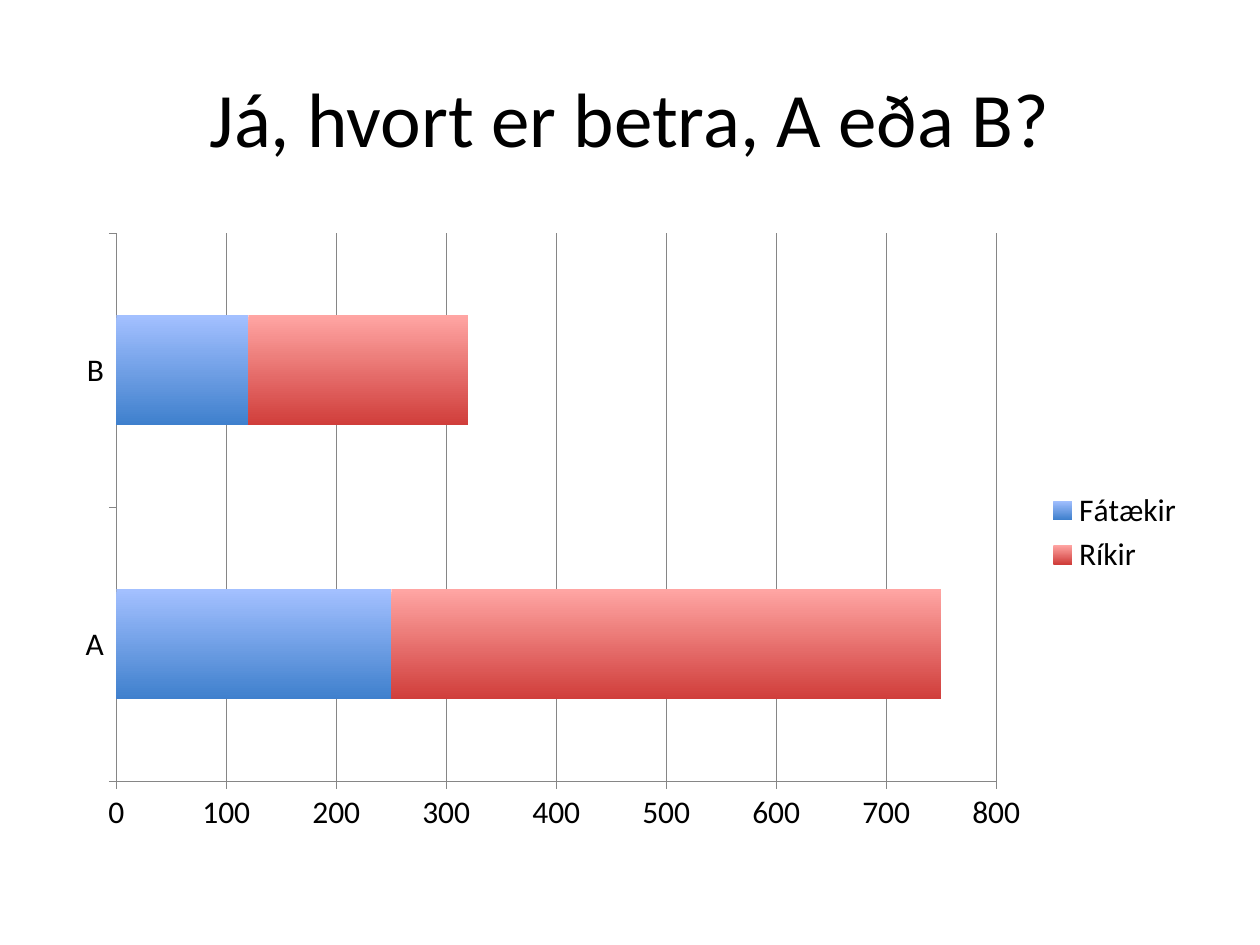
from pptx import Presentation
from pptx import util as u
from pptx.chart.data import CategoryChartData
from pptx.dml.color import RGBColor
from pptx.enum import chart as kinds, text


def color(value):
    return RGBColor.from_string(value)


def set_values(target, values):
    for name, value in values.items():
        setattr(target, name, value)


deck = Presentation()
set_values(deck, {"slide_width": u.Cm(25.4), "slide_height": u.Cm(19.05)})
page = deck.slides.add_slide(deck.slide_layouts[5])

title = page.shapes.title
set_values(title, {"left": u.Cm(1.27), "top": u.Cm(0.76),
                   "width": u.Cm(22.86), "height": u.Cm(3.18)})
title.text_frame.text = "Já, hvort er betra, A eða B?"
title.text_frame.vertical_anchor = text.MSO_ANCHOR.MIDDLE
para = title.text_frame.paragraphs[0]
para.alignment = text.PP_ALIGN.CENTER
span = para.runs[0]
set_values(span.font, {"name": "Calibri", "size": u.Pt(44)})
span.font.color.rgb = color("000000")

data = CategoryChartData()
data.categories = ["A", "B"]
data.add_series("Fátækir", [250, 120])
data.add_series("Ríkir", [500, 200])
chart = page.shapes.add_chart(
    kinds.XL_CHART_TYPE.BAR_STACKED,
    u.Cm(1.27), u.Cm(4.45), u.Cm(22.86), u.Cm(12.57), data).chart
set_values(chart, {"has_title": False, "has_legend": True})
set_values(chart.font, {"name": "Calibri", "size": u.Pt(18)})
chart.font.color.rgb = color("000000")
set_values(chart.legend, {"position": kinds.XL_LEGEND_POSITION.RIGHT,
                          "include_in_layout": False})

plot = chart.plots[0]
set_values(plot, {"gap_width": 150, "overlap": 100, "vary_by_categories": False})
gradients = [("A3C0FF", "3F80CD"), ("FFA5A3", "D03E3B")]
for series, shades in zip(plot.series, gradients):
    series.invert_if_negative = False
    fill = series.format.fill
    fill.gradient()
    fill.gradient_angle = 270
    for stop, shade in zip(fill.gradient_stops, shades):
        stop.color.rgb = color(shade)

set_values(chart.value_axis, {"minimum_scale": 0, "maximum_scale": 800,
                              "major_unit": 100, "has_major_gridlines": True})
for axis in (chart.category_axis, chart.value_axis):
    set_values(axis, {"major_tick_mark": kinds.XL_TICK_MARK.OUTSIDE,
                      "minor_tick_mark": kinds.XL_TICK_MARK.NONE})
for part in (chart.category_axis, chart.value_axis, chart.value_axis.major_gridlines):
    part.format.line.width = u.Pt(0.75)
    part.format.line.color.rgb = color("868686")

deck.save("out.pptx")
